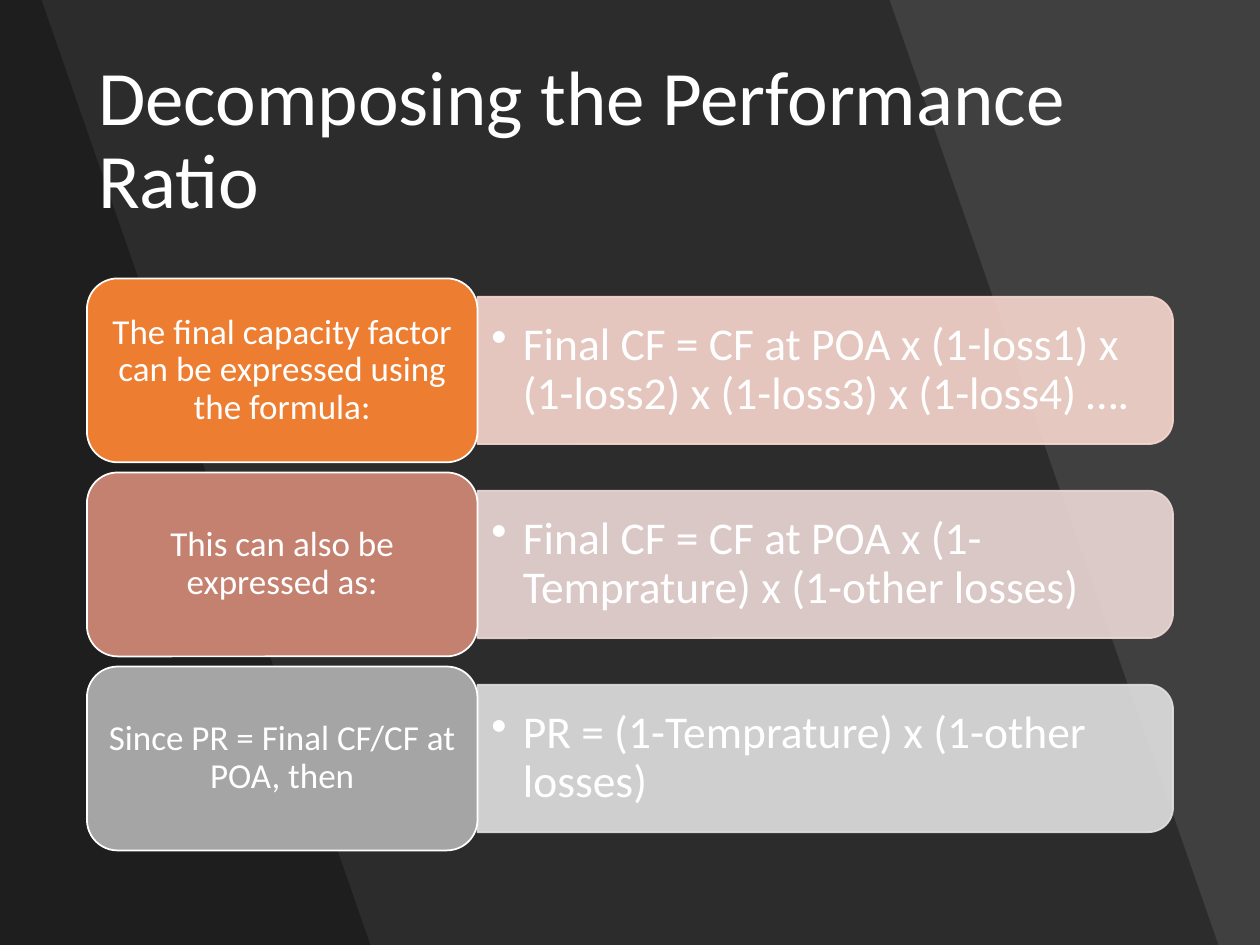
import lxml.etree
import pptx
import pptx.dml.color
import pptx.enum.shapes
import pptx.enum.text
import pptx.oxml.ns
import pptx.util

PX = 9144  # EMU per px, 100 px to the inch
FONT = "Calibri"
WHITE = "FFFFFF"
SHAPES = pptx.enum.shapes.MSO_SHAPE
ALIGN = pptx.enum.text.PP_ALIGN

ROWS = [
    ("The final capacity factor can be expressed using the formula:", "ED7D31",
     "Final CF = CF at POA x (1-loss1) x (1-loss2) x (1-loss3) x (1-loss4) ….", "F8D7CE"),
    ("This can also be expressed as:", "C48170",
     "Final CF = CF at POA x (1-Temprature) x (1-other losses)", "EDD9D7"),
    ("Since PR = Final CF/CF at POA, then", "A5A5A5",
     "PR = (1-Temprature) x (1-other losses)", "E1E1E1"),
]


def emu(*lengths):
    return [round(length * PX) for length in lengths]


def color(hex_string):
    return pptx.dml.color.RGBColor.from_string(hex_string)


def style(shape, fill, line=None, opacity=100):
    shape.shadow.inherit = False
    shape.fill.solid()
    shape.fill.fore_color.rgb = color(fill)
    if line:
        shape.line.color.rgb = color(line)
        shape.line.width = pptx.util.Pt(1)
    else:
        shape.line.fill.background()
    if opacity < 100:
        tag = pptx.oxml.ns.qn("a:alpha")
        for node in list(shape._element.spPr.iter(pptx.oxml.ns.qn("a:srgbClr"))):
            lxml.etree.SubElement(node, tag).set("val", str(opacity * 1000))


def add_text(page, box, text, size, margins, align=ALIGN.LEFT):
    frame = page.shapes.add_textbox(*emu(*box)).text_frame
    frame.word_wrap = True
    frame.vertical_anchor = pptx.enum.text.MSO_ANCHOR.MIDDLE
    across, down = emu(*margins)
    frame.margin_left = frame.margin_right = across
    frame.margin_top = frame.margin_bottom = down
    para = frame.paragraphs[0]
    para.alignment = align
    para.line_spacing = 0.9
    span = para.add_run()
    span.text = text
    span.font.name = FONT
    span.font.size = pptx.util.Pt(size)
    span.font.color.rgb = color(WHITE)
    return para


def add_bullet(para, indent):
    properties = para._p.get_or_add_pPr()
    width = emu(indent)[0]
    properties.set("marL", str(width))
    properties.set("indent", str(-width))
    bullet = lxml.etree.SubElement(properties, pptx.oxml.ns.qn("a:buChar"))
    bullet.set("char", "•")


def add_backdrop(page, box):
    """Dark slanted bands that start at the left edge."""
    left, top, width, height = box
    slant = 261
    page.background.fill.solid()
    page.background.fill.fore_color.rgb = color("404040")
    for reach in (width - 294, 33):
        outline = page.shapes.build_freeform(left, top, scale=PX)
        outline.add_line_segments([
            (left + reach, top), (left + reach + slant, top + height),
            (left, top + height)], close=True)
        style(outline.convert_to_shape(), "000000", opacity=30)


def add_row(page, box, label, label_fill, formula, formula_fill):
    """A label card, with its formula on a pale bar to the right."""
    left, top, width, height = box
    card_width, bar_height = 310, 117
    bar_left, bar_width = left + card_width, width - card_width
    middle = top + height / 2

    # Formula bar: an upright shape turned to round its right end
    bar = page.shapes.add_shape(SHAPES.ROUND_2_SAME_RECTANGLE, *emu(
        bar_left + (bar_width - bar_height) / 2, middle - bar_width / 2,
        bar_height, bar_width))
    bar.rotation = 90
    style(bar, formula_fill, formula_fill, opacity=90)
    para = add_text(page, (bar_left, middle - 53, bar_width - 6, 106),
                    formula, 26, (11, 5))
    add_bullet(para, 25)

    # Label card
    card = page.shapes.add_shape(SHAPES.ROUNDED_RECTANGLE,
                                 *emu(left, top, card_width, height))
    style(card, label_fill, WHITE)
    inset = 7
    add_text(page, (left + inset, top + inset, card_width - 2 * inset,
                    height - 2 * inset), label, 20, (8, 4), ALIGN.CENTER)


def add_rows(page, box):
    left, top, width, height = box
    gap = 8
    row_height = (height - gap * (len(ROWS) - 1)) / len(ROWS)
    for index, row in enumerate(ROWS):
        row_top = top + index * (row_height + gap)
        add_row(page, (left, row_top, width, row_height), *row)


def main():
    deck = pptx.Presentation()
    deck.slide_width, deck.slide_height = emu(1000, 750)
    page = deck.slides.add_slide(deck.slide_layouts[6])
    add_backdrop(page, (0, 0, 1000, 750))
    add_rows(page, (69, 221, 862, 454))
    add_text(page, (68, 40, 863, 145), "Decomposing the Performance Ratio", 44, (10, 5))
    deck.save("out.pptx")


if __name__ == "__main__":
    main()
